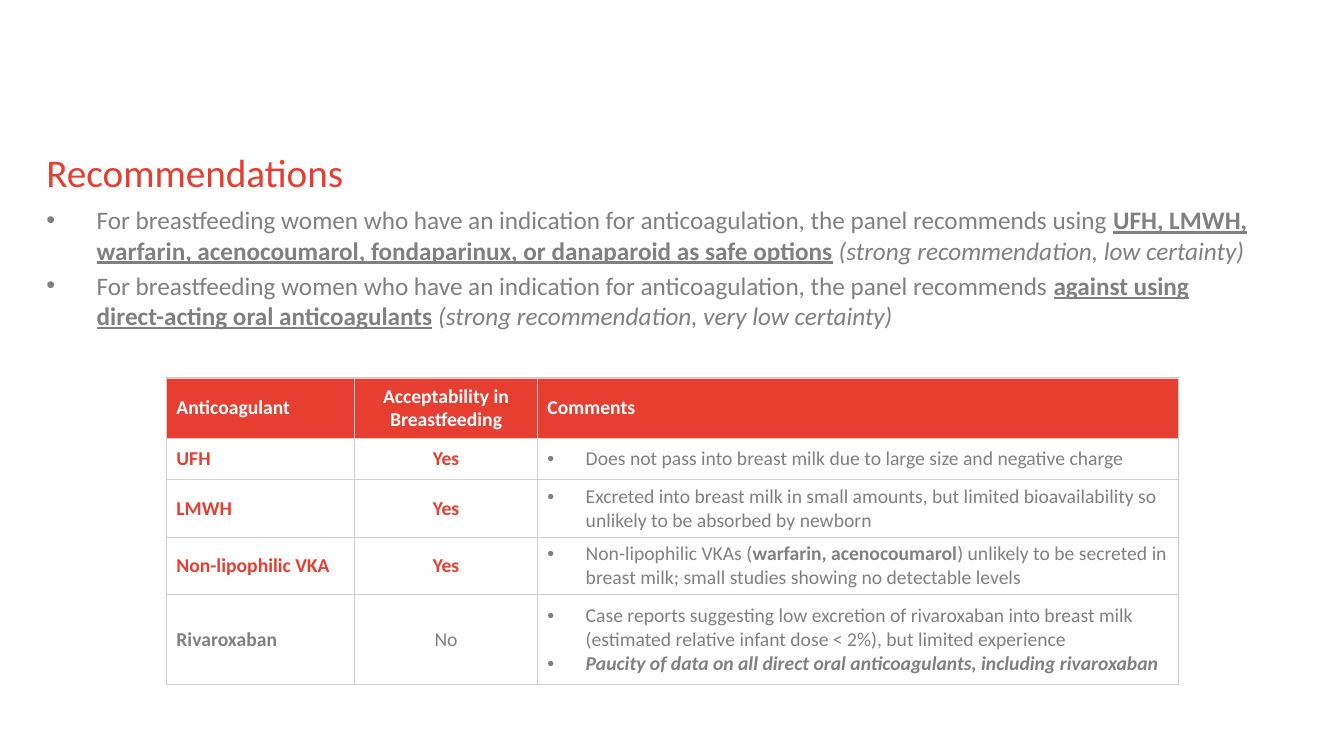
from lxml.etree import SubElement
from pptx import Presentation
from pptx.dml.color import RGBColor
from pptx.enum.text import MSO_ANCHOR, PP_ALIGN
from pptx.oxml.ns import qn
from pptx.util import Inches, Pt

FONT = "Calibri"
COLORS = {"title": "E53E31", "red": "E63E30", "grey": "808080",
          "white": "FFFFFF", "border": "D0CECE"}

# Content: a paragraph is a list of (text, style) runs; b bold, i italic, u underline
TITLE = "Recommendations"
RECOMMENDATIONS = [
    [("For breastfeeding women who have an indication for anticoagulation, "
      "the panel recommends using ", ""),
     ("UFH, LMWH, warfarin, acenocoumarol, fondaparinux, or danaparoid as safe options", "bu"),
     (" ", "b"),
     ("(strong recommendation, low certainty)", "i")],
    [("For breastfeeding women who have an indication for anticoagulation, "
      "the panel recommends ", ""),
     ("against using direct-acting oral anticoagulants", "bu"),
     (" ", ""),
     ("(strong recommendation, very low certainty)", "i")],
]
HEADERS = ["Anticoagulant", "Acceptability in Breastfeeding", "Comments"]
DRUGS = [
    ("UFH", "Yes",
     [[("Does not pass into breast milk due to large size and negative charge", "")]]),
    ("LMWH", "Yes",
     [[("Excreted into breast milk in small amounts, but limited bioavailability "
        "so unlikely to be absorbed by newborn", "")]]),
    ("Non-lipophilic VKA", "Yes",
     [[("Non-lipophilic VKAs (", ""), ("warfarin, acenocoumarol", "b"),
       (") unlikely to be secreted in breast milk; small studies showing "
        "no detectable levels", "")]]),
    ("Rivaroxaban", "No",
     [[("Case reports suggesting low excretion of rivaroxaban into breast milk "
        "(estimated relative infant dose < 2%), but limited experience", "")],
      [("Paucity of data on all direct oral anticoagulants, including rivaroxaban", "bi")]]),
]
COLUMN_WIDTHS = [1.87, 1.81, 6.36]
ROW_HEIGHTS = [0.6, 0.41, 0.57, 0.57, 0.89]


def color(name):
    return RGBColor.from_string(COLORS[name])


def set_font(paragraph, size, color_name, bold=None):
    font = paragraph.font
    font.name, font.size, font.bold = FONT, Pt(size), bold
    font.color.rgb = color(color_name)


def fill_bullets(frame, paragraphs, size, indent):
    for index, runs in enumerate(paragraphs):
        paragraph = frame.add_paragraph() if index else frame.paragraphs[0]
        properties = paragraph._p.get_or_add_pPr()
        properties.set("marL", str(Inches(indent)))
        properties.set("indent", str(-Inches(indent)))
        SubElement(properties, qn("a:buFont"), typeface="Arial")
        SubElement(properties, qn("a:buChar"), char="•")
        set_font(paragraph, size, "grey")
        for text, style in runs:
            run = paragraph.add_run()
            run.text = text
            run.font.bold = "b" in style
            run.font.italic = "i" in style
            run.font.underline = "u" in style


def clear_margins(frame):
    frame.margin_left = frame.margin_right = frame.margin_top = frame.margin_bottom = 0
    frame.word_wrap = True
    frame.vertical_anchor = MSO_ANCHOR.TOP


def format_cell(cell, fill_name=None):
    cell.vertical_anchor = MSO_ANCHOR.MIDDLE
    properties = cell._tc.get_or_add_tcPr()
    for side in ("lnL", "lnR", "lnT", "lnB"):
        line = SubElement(properties, qn(f"a:{side}"), w=str(Pt(1)))
        solid = SubElement(line, qn("a:solidFill"))
        SubElement(solid, qn("a:srgbClr"), val=COLORS["border"])
    if fill_name:
        cell.fill.solid()
        cell.fill.fore_color.rgb = color(fill_name)
    else:
        cell.fill.background()


def write_label(cell, text, color_name, bold, centred):
    cell.text = text
    paragraph = cell.text_frame.paragraphs[0]
    paragraph.alignment = PP_ALIGN.CENTER if centred else PP_ALIGN.LEFT
    set_font(paragraph, 14, color_name, bold)


def main():
    presentation = Presentation()
    presentation.slide_width, presentation.slide_height = Inches(13.33), Inches(7.5)
    slide = presentation.slides.add_slide(presentation.slide_layouts[5])

    # Title
    title = slide.shapes.title
    title.left, title.top = Inches(0.46), Inches(1.47)
    title.width, title.height = Inches(12), Inches(0.78)
    title.text = TITLE
    clear_margins(title.text_frame)
    heading = title.text_frame.paragraphs[0]
    heading.alignment = PP_ALIGN.LEFT
    set_font(heading, 28, "title")

    # Recommendations
    advice = slide.shapes.add_textbox(Inches(0.46), Inches(2.03), Inches(12), Inches(1.33))
    clear_margins(advice.text_frame)
    fill_bullets(advice.text_frame, RECOMMENDATIONS, 18, 0.5)
    advice.text_frame.paragraphs[1].space_before = Pt(3.6)

    # Anticoagulant table
    table = slide.shapes.add_table(
        len(ROW_HEIGHTS), len(COLUMN_WIDTHS), Inches(1.65), Inches(3.75),
        Inches(sum(COLUMN_WIDTHS)), Inches(sum(ROW_HEIGHTS))).table
    table.horz_banding = False
    for column, width in zip(table.columns, COLUMN_WIDTHS):
        column.width = Inches(width)
    for row, height in zip(table.rows, ROW_HEIGHTS):
        row.height = Inches(height)

    for index, header in enumerate(HEADERS):
        cell = table.cell(0, index)
        format_cell(cell, "red")
        write_label(cell, header, "white", True, index == 1)

    for row, (drug, acceptable, comments) in enumerate(DRUGS, start=1):
        drug_cell, acceptable_cell, comment_cell = table.rows[row].cells
        for cell in (drug_cell, acceptable_cell, comment_cell):
            format_cell(cell)
        safe = acceptable == "Yes"
        label_color = "red" if safe else "grey"
        write_label(drug_cell, drug, label_color, True, False)
        write_label(acceptable_cell, acceptable, label_color, safe, True)
        fill_bullets(comment_cell.text_frame, comments, 14, 0.38)

    presentation.save("out.pptx")


if __name__ == "__main__":
    main()
